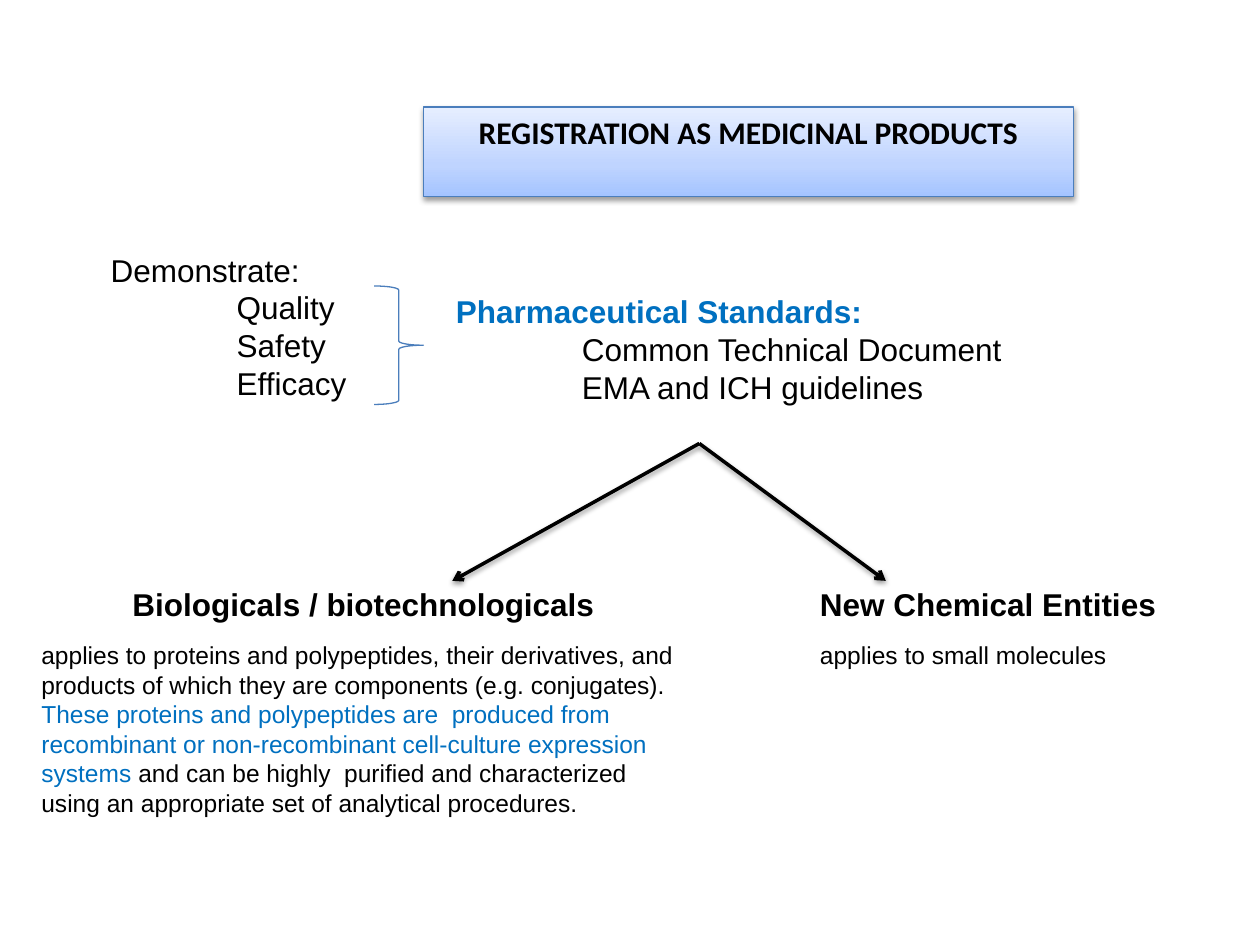
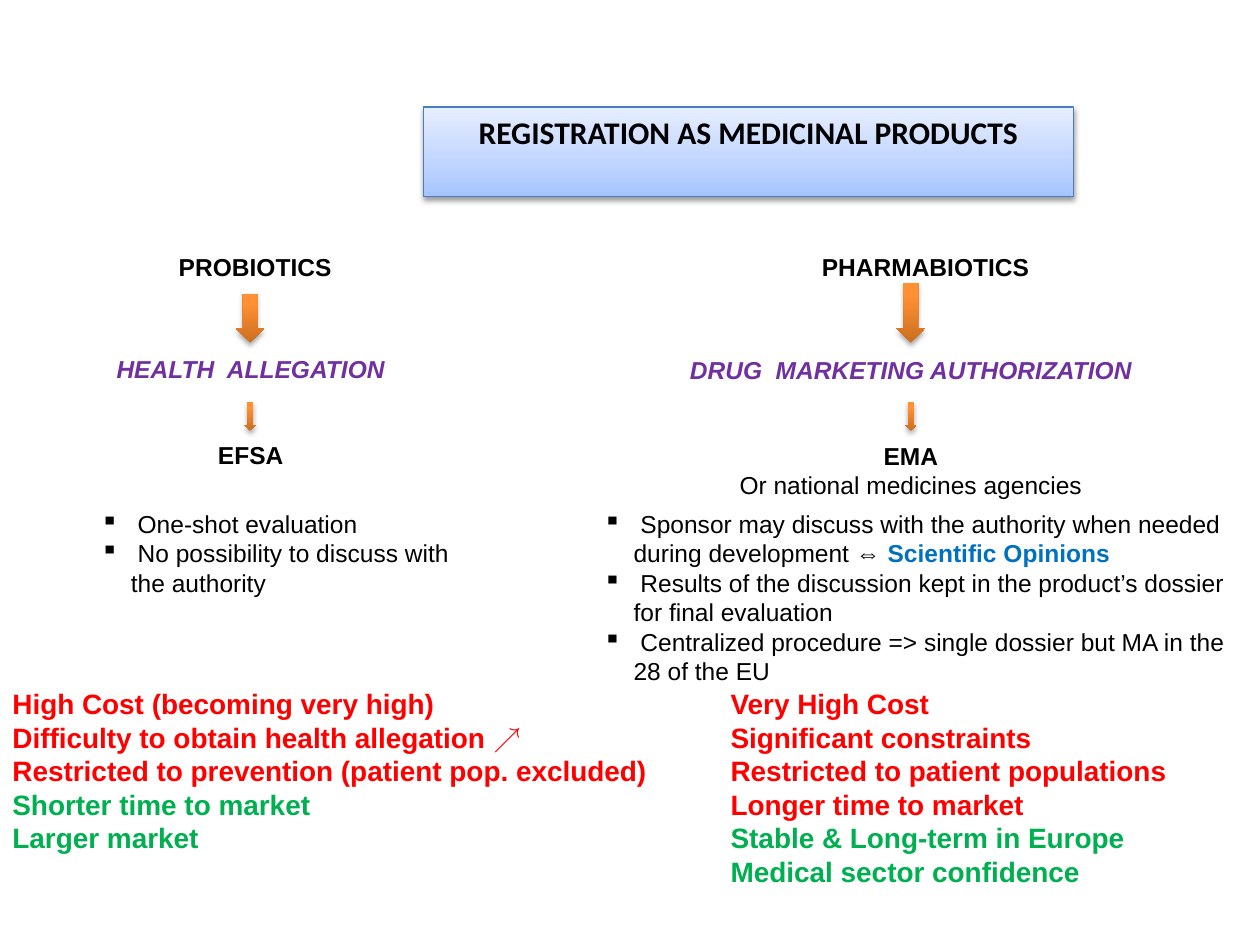
from dataclasses import dataclass
from lxml.etree import SubElement
from pptx import Presentation
from pptx.dml.color import RGBColor
from pptx.enum.shapes import MSO_CONNECTOR, MSO_SHAPE
from pptx.enum.text import MSO_ANCHOR, PP_ALIGN
from pptx.oxml.ns import qn
from pptx.util import Inches, Pt


@dataclass(frozen=True)
class Theme:
    black: str = "000000"
    blue: str = "0070C0"
    purple: str = "7030A0"
    red: str = "FF0000"
    green: str = "00B050"
    edge: str = "4B7EBC"
    band: tuple = ((0, "A4C4FF"), (35, "BFD4FF"), (100, "E6EEFF"))
    arrow: tuple = ((0, "CC6E20"), (80, "FF9034"), (100, "FF9136"))
    head: int = 18
    mid: int = 16
    body: int = 14
    thin: float = 0.75
    thick: float = 2
    font: str = "Arial"
    title: str = "Calibri"


@dataclass(frozen=True)
class Style:
    size: int
    color: str = Theme.black
    bold: bool = False
    slant: bool = False
    font: str = Theme.font
    center: bool = False
    gap: float = 0
    indent: float = 0
    bullet: str = ""


theme = Theme()
title = Style(theme.head, bold=True, font=theme.title, center=True)
lead = Style(theme.head)
item = Style(theme.head, indent=1)
key = Style(theme.head, theme.blue, bold=True)
name = Style(theme.head, bold=True)
midname = Style(theme.head, bold=True, center=True)
first = Style(theme.body, gap=10.35)
plain = Style(theme.body)
blue = Style(theme.body, theme.blue)
strong = Style(theme.body, theme.blue, bold=True)
label = Style(theme.body, bold=True, center=True)
claim = Style(theme.body, theme.purple, bold=True, slant=True, center=True)
agency = Style(theme.body, bold=True, center=True, gap=32.2)
note = Style(theme.body, center=True)
point = Style(theme.body, indent=0.24, bullet="▪")
con = Style(theme.mid, theme.red, bold=True)
pro = Style(theme.mid, theme.green, bold=True)

deck = Presentation()
deck.slide_width, deck.slide_height = Inches(10), Inches(7.5)
col, row = deck.slide_width / 100, deck.slide_height / 75


def put(slide, box, lines=(), kind=None):
    """Place a text box or a preset shape; each line alternates style and text."""
    left, top, wide, high = box
    place = int(left * col), int(top * row), int(wide * col), int(high * row)
    if kind is None:
        shape = slide.shapes.add_textbox(*place)
    else:
        shape = slide.shapes.add_shape(kind, *place)
        shape.shadow.inherit = False
    frame = shape.text_frame
    frame.word_wrap = True
    frame.vertical_anchor = MSO_ANCHOR.TOP
    frame.text = "\n".join(line[1] for line in lines)
    for para, line in zip(frame.paragraphs, lines):
        for text in line[3::2]:
            para.add_run().text = text
        style = line[0]
        para.alignment = PP_ALIGN.CENTER if style.center else PP_ALIGN.LEFT
        para.space_before = Pt(style.gap)
        props = para._p.get_or_add_pPr()
        props.set("marL", str(Inches(style.indent)))
        if style.bullet:
            props.set("indent", str(-Inches(style.indent)))
            SubElement(props, qn("a:buChar"), char=style.bullet)
        for run, look in zip(para.runs, line[::2]):
            font = run.font
            font.name, font.size = look.font, Pt(look.size)
            font.bold, font.italic = look.bold, look.slant
            font.color.rgb = RGBColor.from_string(look.color)
    return shape


def shade(shape, alpha, dist, stops=()):
    """Give a soft shadow and, when stops are passed, an upward gradient."""
    if stops:
        shape.fill.gradient()
        shape.fill.gradient_angle = 90
        ramp = shape._element.spPr.find(".//" + qn("a:gsLst"))
        ramp.clear()
        for share, color in stops:
            stop = SubElement(ramp, qn("a:gs"), pos=str(share * 1000))
            SubElement(stop, qn("a:srgbClr"), val=color)
    props = shape._element.spPr
    effects = props.find(qn("a:effectLst"))
    if effects is None:
        effects = SubElement(props, qn("a:effectLst"))
    cast = SubElement(effects, qn("a:outerShdw"), blurRad=str(Pt(3.1)),
                      dist=str(Pt(dist)), dir="5400000", rotWithShape="0")
    tint = SubElement(cast, qn("a:srgbClr"), val=theme.black)
    SubElement(tint, qn("a:alpha"), val=str(alpha * 1000))


pages = [deck.slides.add_slide(deck.slide_layouts[6]) for _ in range(2)]
for page in pages:
    band = put(page, (33.6, 8.5, 51.6, 7.1),
               [(title, "REGISTRATION AS MEDICINAL PRODUCTS")], MSO_SHAPE.RECTANGLE)
    band.line.color.rgb = RGBColor.from_string(theme.edge)
    band.line.width = Pt(theme.thin)
    shade(band, 38, 1.6, theme.band)

# Slide 1: standards and the two product families
page = pages[0]
put(page, (7.8, 19.4, 22, 13), [
    (lead, "Demonstrate:"), (item, "Quality"), (item, "Safety"), (item, "Efficacy")])
brace = put(page, (29.7, 22.7, 3.9, 9.4), kind=MSO_SHAPE.RIGHT_BRACE)
brace.fill.background()
brace.line.color.rgb = RGBColor.from_string(theme.edge)
brace.line.width = Pt(theme.thin)
put(page, (35.2, 22.7, 53.1, 10.1), [
    (key, "Pharmaceutical Standards:"),
    (item, "Common Technical Document"),
    (item, "EMA and ICH guidelines")])
put(page, (64.1, 45.9, 33.6, 7.9), [
    (name, "New Chemical Entities"),
    (first, "applies to small molecules")])
put(page, (2.3, 45.9, 53.1, 19.7), [
    (midname, "Biologicals / biotechnologicals"),
    (first, "applies to proteins and polypeptides, their derivatives, and "
            "products of which they are components (e.g. conjugates). ",
     blue, "These proteins and polypeptides are  produced from recombinant "
           "or non-recombinant cell-culture expression systems ",
     plain, "and can be highly  purified and characterized using an "
            "appropriate set of analytical procedures.")])
for end in (35.9, 70.3):
    branch = page.shapes.add_connector(
        MSO_CONNECTOR.STRAIGHT, int(55.5 * col), int(35.2 * row),
        int(end * col), int(46.1 * row))
    branch.line.color.rgb = RGBColor.from_string(theme.black)
    branch.line.width = Pt(theme.thick)
    SubElement(branch.line._get_or_add_ln(), qn("a:tailEnd"), type="arrow")
    shade(branch, 38, 1.6)

# Slide 2: probiotics beside pharmabiotics
page = pages[1]
for left, text in ((6.2, "PROBIOTICS"), (59.4, "PHARMABIOTICS")):
    put(page, (left, 19.5, 28.1, 3.4), [(label, text)])
for mid, start in ((19.85, 23.3), (72.3, 22.5)):
    for top, wide, high in ((start, 2.3, 27.2 - start), (31.9, 0.9, 2.3)):
        arrow = put(page, (mid - wide / 2, top, wide, high), kind=MSO_SHAPE.DOWN_ARROW)
        arrow.line.fill.background()
        shade(arrow, 35, 1.8, theme.arrow)
put(page, (3.9, 27.6, 32, 10.4), [(claim, "HEALTH  ALLEGATION"), (agency, "EFSA")])
put(page, (47.3, 27.7, 50, 12.8), [
    (claim, "DRUG  MARKETING AUTHORIZATION"),
    (agency, "EMA"),
    (note, "Or national medicines agencies")])
put(page, (7, 39.9, 32.8, 8.1), [
    (point, " One-shot evaluation"),
    (point, " No possibility to discuss with the authority")])
put(page, (46.9, 39.9, 53.1, 15.1), [
    (point, " Sponsor may discuss with the authority when needed during development ⇔ ",
     strong, "Scientific Opinions"),
    (point, " Results of the discussion kept in the product’s dossier for final evaluation"),
    (point, " Centralized procedure => single dossier but MA in the 28 of the EU")])
put(page, (57, 54, 39.8, 17.2), [
    (con, "Very High Cost"),
    (con, "Significant constraints"),
    (con, "Restricted to patient populations"),
    (con, "Longer time to market"),
    (pro, "Stable & Long-term in Europe"),
    (pro, "Medical sector confidence")])
put(page, (0, 54, 53.9, 17.2), [
    (con, "High Cost (becoming very high)"),
    (con, "Difficulty to obtain health allegation ↗"),
    (con, "Restricted to prevention (patient pop. excluded)"),
    (pro, "Shorter time to market"),
    (pro, "Larger market")])

deck.save("out.pptx")
